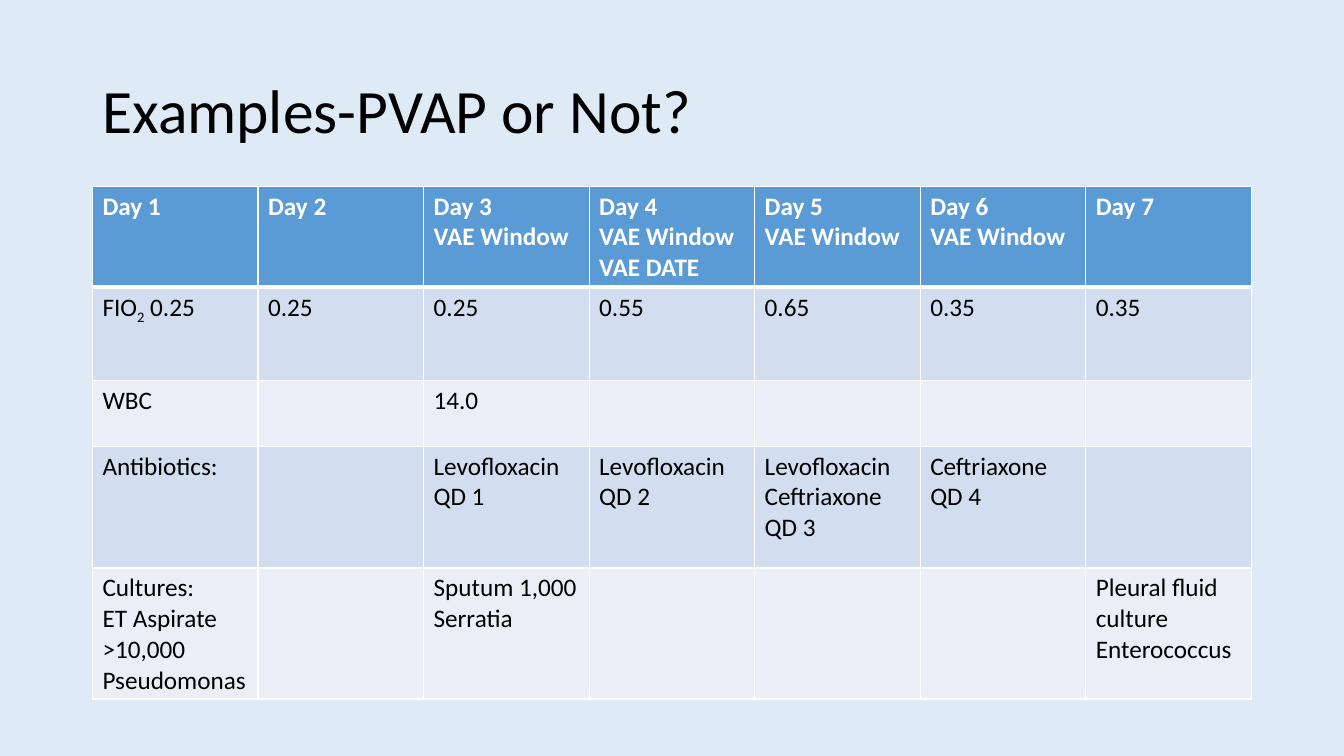
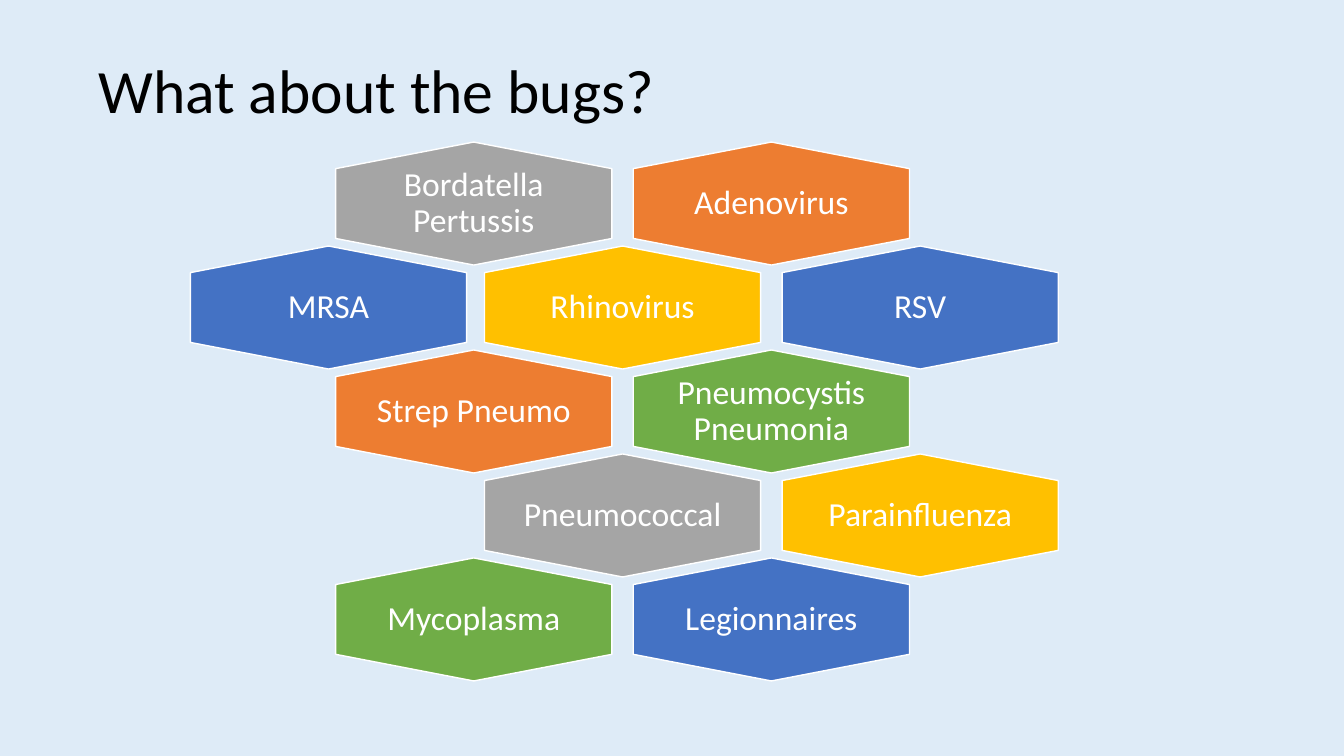
from dataclasses import dataclass
from typing import NamedTuple

from lxml.etree import SubElement
from pptx import Presentation
from pptx.dml.color import RGBColor
from pptx.enum.text import MSO_ANCHOR, PP_ALIGN
from pptx.oxml.ns import qn
from pptx.util import Cm, Pt

FONT = "Calibri"
BACKGROUND = "DEEBF7"
BLACK = "000000"
WHITE = "FFFFFF"
HEADER_BLUE = "5B9BD5"
BANDS = ("D2DEEF", "EAEFF7")
BLUE, ORANGE, GRAY = "4472C4", "ED7D31", "A5A5A5"
GOLD, GREEN = "FFC000", "70AD47"

CONTENT_WIDTH = 29.21
TITLE_HEIGHT = 3.68

THIN, THICK = 1, 3
ROW_HEIGHTS = (2.36, 2.36, 1.65, 3.07, 3.07)
# Each line is a paragraph; text between tildes is subscript.
PATIENT_DAYS = (
    ("Day 1", "Day 2", "Day 3\nVAE Window", "Day 4\nVAE Window\nVAE DATE",
     "Day 5\nVAE Window", "Day 6\nVAE Window", "Day 7"),
    ("FIO~2~ 0.25", "0.25", "0.25", "0.55", "0.65", "0.35", "0.35"),
    ("WBC", "", "14.0", "", "", "", ""),
    ("Antibiotics:", "", "Levofloxacin\nQD 1", "Levofloxacin\nQD 2",
     "Levofloxacin Ceftriaxone QD 3", "Ceftriaxone QD 4", ""),
    ("Cultures:\nET Aspirate >10,000 Pseudomonas", "", "Sputum 1,000 Serratia",
     "", "", "", "Pleural fluid culture Enterococcus"),
)

HEX_WIDTH, HEX_HEIGHT, HEX_SHOULDER = 6.96, 3.1, 0.67
HEX_LEFT, HEX_TOP = 8.46, 3.58
COLUMN_STEP, ROW_STEP = 3.75, 2.62


class TextStyle(NamedTuple):
    size: int
    color: str
    bold: bool = False
    align: PP_ALIGN = PP_ALIGN.LEFT
    line_spacing: float = 1.0


TITLE_STYLE = TextStyle(44, BLACK, line_spacing=0.9)
HEADER_STYLE = TextStyle(18, WHITE, bold=True)
BODY_STYLE = TextStyle(18, BLACK)
BUG_STYLE = TextStyle(24, WHITE, align=PP_ALIGN.CENTER, line_spacing=0.9)


@dataclass(frozen=True)
class Bug:
    """A hexagon on the honeycomb; nudge shifts it right, in cm."""
    name: str
    column: int
    row: int
    color: str
    nudge: float = 0.0


BUGS = (
    Bug("Adenovirus", 2, 0, ORANGE),
    Bug("Bordatella Pertussis", 0, 0, GRAY),
    Bug("Rhinovirus", 1, 1, GOLD),
    Bug("RSV", 3, 1, BLUE),
    Bug("Pneumocystis Pneumonia", 2, 2, GREEN),
    Bug("Strep Pneumo", 0, 2, ORANGE),
    Bug("Pneumococcal", 1, 3, GRAY),
    Bug("Parainfluenza", 3, 3, GOLD),
    Bug("Legionnaires", 2, 4, BLUE),
    Bug("Mycoplasma", 0, 4, GREEN),
    Bug("MRSA", -1, 1, BLUE, nudge=0.09),
)


def paint(fill, color: str) -> None:
    fill.solid()
    fill.fore_color.rgb = RGBColor.from_string(color)


def write(frame, text: str, style: TextStyle) -> None:
    """Write one paragraph per line, with tilde-marked subscripts as own runs."""
    frame.word_wrap = True
    for number, line in enumerate(text.split("\n")):
        paragraph = frame.add_paragraph() if number else frame.paragraphs[0]
        paragraph.alignment = style.align
        paragraph.line_spacing = style.line_spacing
        for position, part in enumerate(line.split("~")):
            if not part:
                continue
            run = paragraph.add_run()
            run.text = part
            run.font.name = FONT
            run.font.size = Pt(style.size)
            run.font.bold = style.bold
            run.font.color.rgb = RGBColor.from_string(style.color)
            if position % 2:
                run.font._element.set("baseline", "-25000")


def add_titled_slide(deck, title: str, left: float, top: float):
    slide = deck.slides.add_slide(deck.slide_layouts[6])
    paint(slide.background.fill, BACKGROUND)
    box = slide.shapes.add_textbox(
        Cm(left), Cm(top), Cm(CONTENT_WIDTH), Cm(TITLE_HEIGHT))
    box.text_frame.vertical_anchor = MSO_ANCHOR.MIDDLE
    write(box.text_frame, title, TITLE_STYLE)
    return slide


def set_borders(cell, top: int, bottom: int) -> None:
    properties = cell._tc.get_or_add_tcPr()
    widths = {"lnL": THIN, "lnR": THIN, "lnT": top, "lnB": bottom}
    for side, width in widths.items():
        line = SubElement(properties, qn(f"a:{side}"), w=str(Pt(width)))
        color = SubElement(line, qn("a:solidFill"))
        SubElement(color, qn("a:srgbClr"), val=WHITE)


def add_patient_table(slide, left: float, top: float) -> None:
    column_count = len(PATIENT_DAYS[0])
    table = slide.shapes.add_table(
        len(PATIENT_DAYS), column_count, Cm(left), Cm(top),
        Cm(CONTENT_WIDTH), Cm(sum(ROW_HEIGHTS))).table
    for column in table.columns:
        column.width = Cm(CONTENT_WIDTH / column_count)
    for row_number, texts in enumerate(PATIENT_DAYS):
        table.rows[row_number].height = Cm(ROW_HEIGHTS[row_number])
        is_header = row_number == 0
        color = HEADER_BLUE if is_header else BANDS[(row_number - 1) % 2]
        for column_number, text in enumerate(texts):
            cell = table.cell(row_number, column_number)
            set_borders(cell, top=THICK if row_number == 1 else THIN,
                        bottom=THICK if is_header else THIN)
            paint(cell.fill, color)
            write(cell.text_frame, text,
                  HEADER_STYLE if is_header else BODY_STYLE)


def add_bug(slide, bug: Bug) -> None:
    left = HEX_LEFT + bug.column * COLUMN_STEP + bug.nudge
    top = HEX_TOP + bug.row * ROW_STEP
    middle, right = left + HEX_WIDTH / 2, left + HEX_WIDTH
    bottom = top + HEX_HEIGHT
    upper, lower = top + HEX_SHOULDER, bottom - HEX_SHOULDER
    corners = ((right, upper), (right, lower), (middle, bottom),
               (left, lower), (left, upper))
    outline = slide.shapes.build_freeform(Cm(middle), Cm(top))
    outline.add_line_segments([(Cm(x), Cm(y)) for x, y in corners], close=True)
    hexagon = outline.convert_to_shape()
    hexagon.shadow.inherit = False
    paint(hexagon.fill, bug.color)
    paint(hexagon.line.fill, WHITE)
    hexagon.line.width = Pt(1)
    frame = hexagon.text_frame
    frame.vertical_anchor = MSO_ANCHOR.MIDDLE
    frame.margin_left = frame.margin_right = Cm(0.4)
    frame.margin_top = frame.margin_bottom = Cm(0.45)
    write(frame, bug.name, BUG_STYLE)


def main() -> None:
    deck = Presentation()
    deck.slide_width, deck.slide_height = Cm(33.87), Cm(19.05)

    examples = add_titled_slide(deck, "Examples-PVAP or Not?", 2.33, 1.02)
    add_patient_table(examples, 2.33, 4.69)

    bugs = add_titled_slide(deck, "What about the bugs?", 2.23, 0.53)
    for bug in BUGS:
        add_bug(bugs, bug)

    deck.save("out.pptx")


if __name__ == "__main__":
    main()
